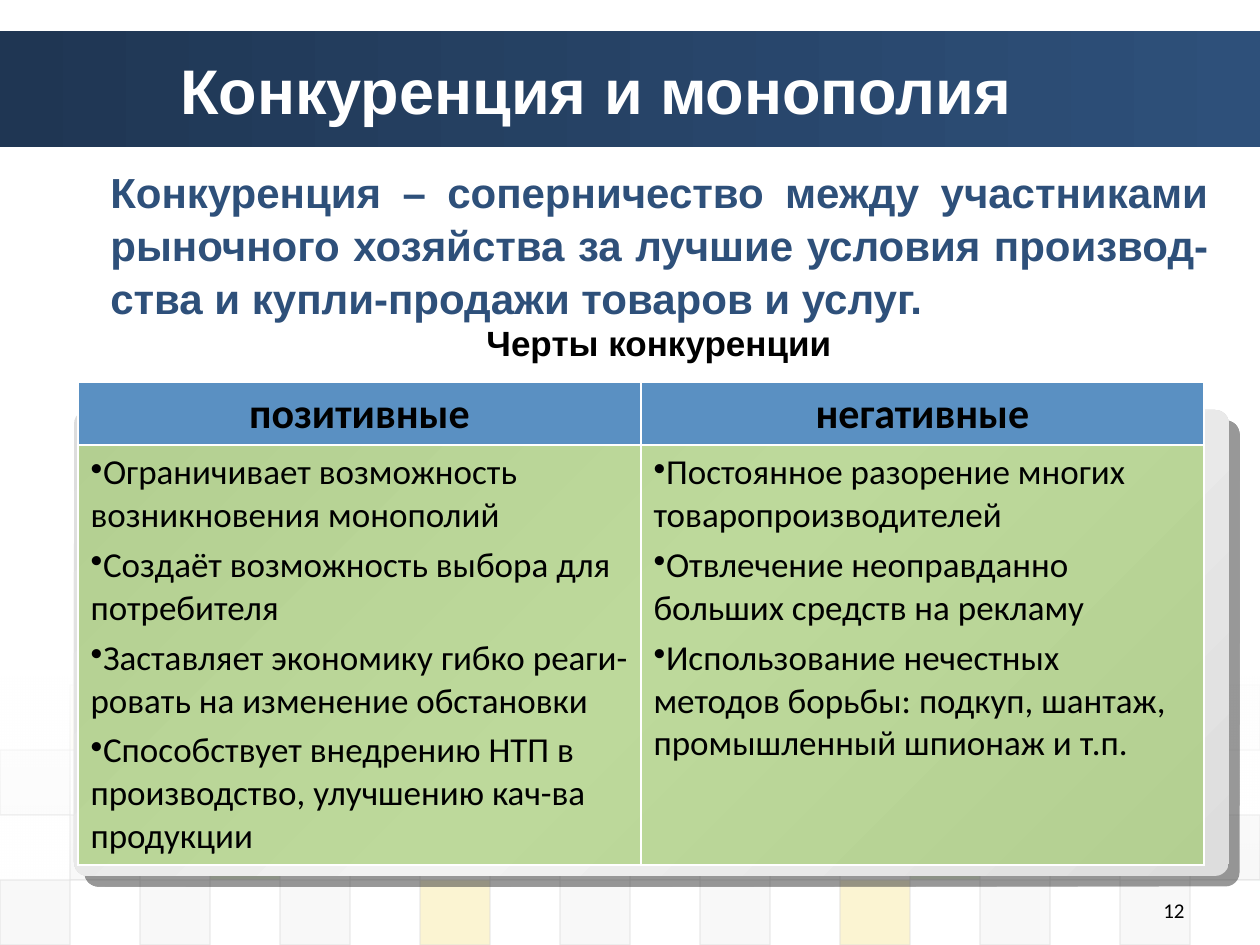
import dataclasses

import lxml.etree
import pptx
import pptx.dml.color
import pptx.enum.shapes
import pptx.enum.text
import pptx.oxml
import pptx.oxml.ns
import pptx.util

PX_PER_INCH = 126
ALIGN = pptx.enum.text.PP_ALIGN
ANCHOR = pptx.enum.text.MSO_ANCHOR
SHAPE = pptx.enum.shapes.MSO_SHAPE
qn = pptx.oxml.ns.qn


@dataclasses.dataclass(frozen=True)
class Theme:
    heading_font: str = "Arial"
    body_font: str = "Calibri"
    white: str = "FFFFFF"
    black: str = "000000"
    navy: str = "2E507A"
    dark_navy: str = "1F3653"
    header: str = "5A90C2"
    green: str = "8AC246"
    yellow: str = "EFC821"
    gray: str = "DDDDDD"
    pale: str = "EAEAEA"
    panel_light: str = "F2F2F2"
    shadow: str = "333333"
    title_size: int = 36
    large_size: int = 24
    body_size: int = 20
    number_size: int = 12


THEME = Theme()
TILE_COLORS = {"D": THEME.gray, "E": THEME.pale, "G": THEME.green, "Y": THEME.yellow}
TILE_ROWS = [("YEEYDYEGE", 5), ("DDDDGDDDY", 10), ("DGDDDDGDD", 20), ("DDDYDDYDD", 20)]
HEADERS = ["позитивные", "негативные"]
FEATURES = [
    [
        "Ограничивает возможность возникновения монополий",
        "Создаёт возможность выбора для потребителя",
        "Заставляет экономику гибко реаги-ровать на изменение обстановки",
        "Способствует внедрению НТП в производство, улучшению кач-ва продукции",
    ],
    [
        "Постоянное разорение многих товаропроизводителей",
        "Отвлечение неоправданно больших средств на рекламу",
        "Использование нечестных методов борьбы: подкуп, шантаж, промышленный шпионаж и т.п.",
    ],
]


def px(n):
    return pptx.util.Emu(round(n * 914400 / PX_PER_INCH))


def rgb(color):
    return pptx.dml.color.RGBColor.from_string(color)


def xml(tag, body, attrs=""):
    return pptx.oxml.parse_xml(
        f'<a:{tag} {pptx.oxml.ns.nsdecls("a")} {attrs}>{body}</a:{tag}>'
    )


def color_xml(color, alpha=100):
    return f'<a:srgbClr val="{color}"><a:alpha val="{alpha * 1000}"/></a:srgbClr>'


def set_alpha(parent, alpha):
    clr = parent.find(qn("a:solidFill")).find(qn("a:srgbClr"))
    lxml.etree.SubElement(clr, qn("a:alpha")).set("val", str(alpha * 1000))


def add_box(slide, at, color, kind=SHAPE.RECTANGLE):
    s = slide.shapes.add_shape(kind, *map(px, at))
    s.shadow.inherit = False
    s.fill.solid()
    s.fill.fore_color.rgb = rgb(color)
    s.line.fill.background()
    return s


def set_gradient(s, stops, angle):
    spPr = s.element.spPr
    gs = "".join(
        f'<a:gs pos="{pos * 1000}">{color_xml(color, alpha)}</a:gs>'
        for pos, color, alpha in stops
    )
    body = f'<a:gsLst>{gs}</a:gsLst><a:lin ang="{angle * 60000}" scaled="0"/>'
    spPr.replace(spPr.find(qn("a:solidFill")), xml("gradFill", body))


def add_tiles(slide):
    for row, (codes, alpha) in enumerate(TILE_ROWS):
        for i, code in enumerate(codes):
            col = 2 * i + (row + 1) % 2
            s = add_box(slide, (70 * col, 685 + 65 * row, 70, 65), TILE_COLORS[code])
            set_alpha(s.element.spPr, alpha)
            s.line.color.rgb = rgb(THEME.gray)
            s.line.width = pptx.util.Pt(0.75)
            set_alpha(s.element.spPr.find(qn("a:ln")), 60)


def add_panel(slide):
    s = add_box(slide, (74, 410, 1155, 466), THEME.gray, SHAPE.ROUNDED_RECTANGLE)
    s.adjustments[0] = 0.03
    set_gradient(
        s,
        [(0, THEME.gray, 100), (50, THEME.panel_light, 100), (100, THEME.gray, 100)],
        45,
    )
    shadow = xml(
        "outerShdw",
        color_xml(THEME.shadow, 50),
        f'dist="{pptx.util.Pt(8.5)}" dir="2700000" algn="ctr" rotWithShape="0"',
    )
    s.element.spPr.find(qn("a:effectLst")).append(shadow)


def style_paragraph(p, font, size, color, bold, align):
    p.alignment = align
    for r in p.runs:
        r.font.name = font
        r.font.size = pptx.util.Pt(size)
        r.font.bold = bold
        r.font.color.rgb = rgb(color)


def add_text(slide, at, text, font, size, color, bold, align, anchor=ANCHOR.TOP):
    tf = slide.shapes.add_textbox(*map(px, at)).text_frame
    tf.word_wrap = True
    tf.vertical_anchor = anchor
    tf.text = text
    p = tf.paragraphs[0]
    style_paragraph(p, font, size, color, bold, align)
    return p


def style_cell(cell, color, alpha=100):
    cell.fill.solid()
    cell.fill.fore_color.rgb = rgb(color)
    tcPr = cell._tc.get_or_add_tcPr()
    set_alpha(tcPr, alpha)
    for i, side in enumerate(("lnL", "lnR", "lnT", "lnB")):
        body = f"<a:solidFill>{color_xml(THEME.white)}</a:solidFill>"
        tcPr.insert(i, xml(side, body, f'w="{pptx.util.Pt(1)}"'))


def fill_header(cell, text):
    style_cell(cell, THEME.header)
    cell.vertical_anchor = ANCHOR.MIDDLE
    cell.text_frame.text = text
    style_paragraph(cell.text_frame.paragraphs[0], THEME.body_font, THEME.large_size,
                    THEME.black, True, ALIGN.CENTER)


def fill_list(cell, items):
    style_cell(cell, THEME.green, 50)
    cell.text_frame.text = "\n".join(items)
    for i, p in enumerate(cell.text_frame.paragraphs):
        pPr = p._p.get_or_add_pPr()
        pPr.set("marL", "0")
        pPr.set("indent", "0")
        pPr.append(xml("buChar", "", 'char="•"'))
        if i:
            p.space_before = pptx.util.Pt(4)
        style_paragraph(p, THEME.body_font, THEME.body_size, THEME.black, False, ALIGN.LEFT)


def add_feature_table(slide):
    table = slide.shapes.add_table(2, 2, *map(px, (78, 382, 1126, 482))).table
    for row, height in zip(table.rows, (62, 420)):
        row.height = px(height)
    for col, (header, items) in enumerate(zip(HEADERS, FEATURES)):
        table.columns[col].width = px(563)
        fill_header(table.cell(0, col), header)
        fill_list(table.cell(1, col), items)


def main():
    prs = pptx.Presentation()
    prs.slide_width, prs.slide_height = px(1260), px(945)
    slide = prs.slides.add_slide(prs.slide_layouts[6])

    band = add_box(slide, (0, 31, 1260, 116), THEME.navy)
    set_gradient(band, [(0, THEME.dark_navy, 100), (100, THEME.navy, 100)], 0)
    add_tiles(slide)
    fade = add_box(slide, (0, 677, 1260, 204), THEME.white)
    set_gradient(fade, [(0, THEME.white, 90), (100, THEME.white, 0)], 90)
    add_panel(slide)

    add_text(slide, (168, 31, 1018, 116), "Конкуренция и монополия", THEME.heading_font,
             THEME.title_size, THEME.white, True, ALIGN.LEFT, ANCHOR.MIDDLE)
    add_feature_table(slide)
    definition = add_text(
        slide, (98, 158, 1123, 165),
        "Конкуренция – соперничество между участниками рыночного хозяйства "
        "за лучшие условия производ-ства и купли-продажи товаров и услуг.",
        THEME.heading_font, THEME.large_size, THEME.navy, True, ALIGN.JUSTIFY)
    definition.line_spacing = 1.05
    add_text(slide, (903, 891, 294, 42), "12", THEME.body_font,
             THEME.number_size, THEME.black, False, ALIGN.RIGHT)
    add_text(slide, (344, 315, 630, 55), "Черты конкуренции", THEME.heading_font,
             THEME.body_size, THEME.black, True, ALIGN.CENTER)
    prs.save("out.pptx")


if __name__ == "__main__":
    main()
